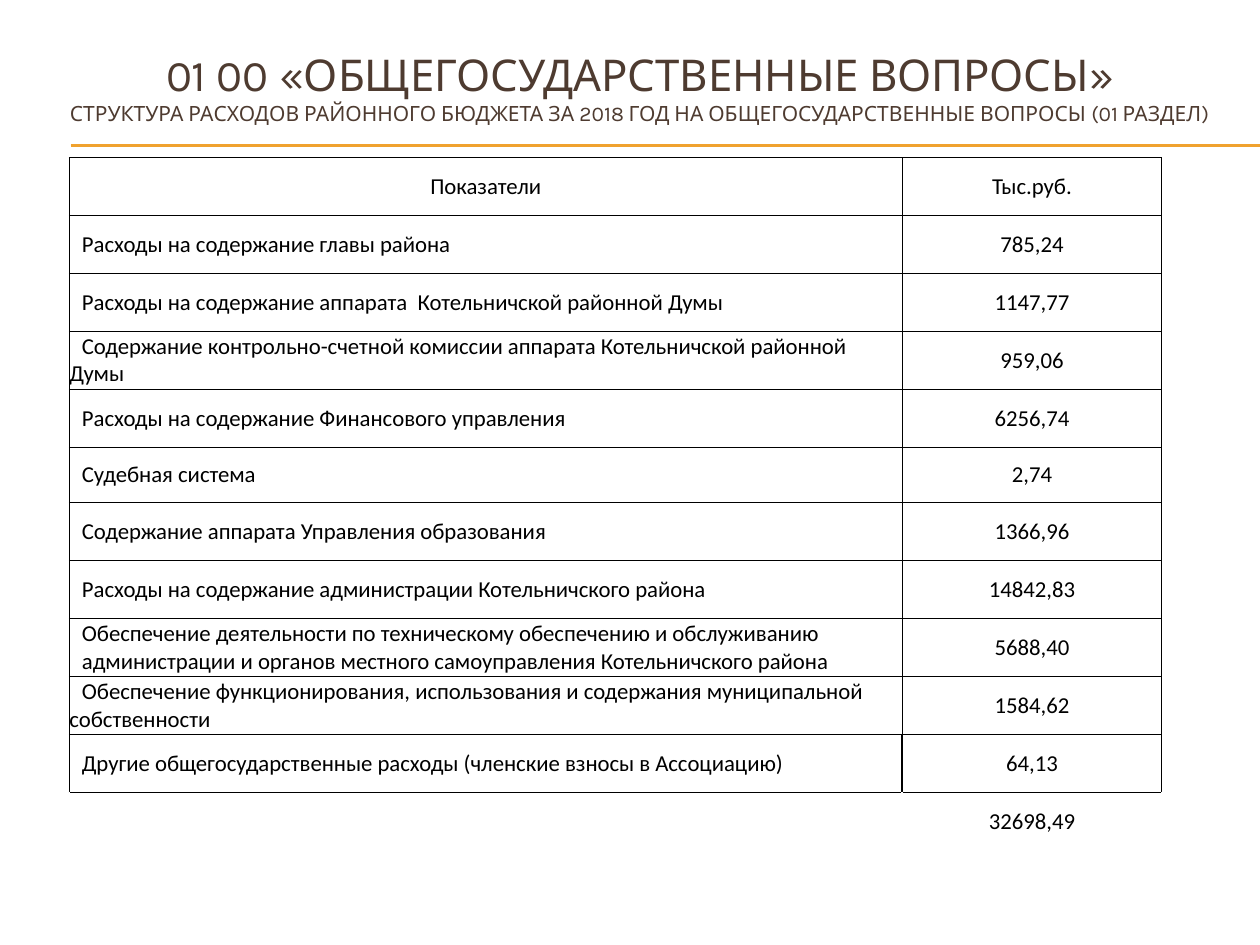
from dataclasses import dataclass

from lxml.etree import SubElement
from pptx import Presentation
from pptx.dml.color import RGBColor
from pptx.enum.shapes import MSO_CONNECTOR
from pptx.enum.text import MSO_ANCHOR, PP_ALIGN
from pptx.oxml import parse_xml
from pptx.oxml.ns import nsdecls, qn
from pptx.util import Inches, Pt

BROWN = RGBColor(0x4E, 0x3B, 0x30)
AMBER = RGBColor(0xF0, 0xA2, 0x2E)
BLACK = RGBColor(0, 0, 0)

THIN, THICK = 0.5, 1
ROW_HEIGHT, COURT_ROW_HEIGHT = 0.46, 0.44
INDENT = 0.1


@dataclass
class Expense:
    name: str
    amount: str
    align: PP_ALIGN = PP_ALIGN.LEFT
    left: float = 0
    first_line: float = INDENT
    height: float = ROW_HEIGHT


HEADER = Expense("Показатели", "Тыс.руб.", PP_ALIGN.CENTER, first_line=0)
EXPENSES = [
    Expense("Расходы на содержание главы района", "785,24"),
    Expense("Расходы на содержание аппарата  Котельничской районной Думы", "1147,77"),
    Expense("Содержание контрольно-счетной комиссии аппарата Котельничской "
            "районной Думы", "959,06"),
    Expense("Расходы на содержание Финансового управления", "6256,74"),
    Expense("Судебная система", "2,74", height=COURT_ROW_HEIGHT),
    Expense("Содержание аппарата Управления образования", "1366,96"),
    Expense("Расходы на содержание администрации Котельничского района", "14842,83"),
    Expense("Обеспечение деятельности по техническому обеспечению и обслуживанию "
            "администрации и органов местного самоуправления Котельничского района",
            "5688,40", left=INDENT, first_line=0),
    Expense("Обеспечение функционирования, использования и содержания "
            "муниципальной собственности", "1584,62"),
    Expense("Другие общегосударственные расходы (членские взносы в Ассоциацию)", "64,13"),
]
TOTAL = Expense("", "32698,49")


def add_span(para, text: str, font: str, size: float, color: RGBColor) -> None:
    span = para.add_run()
    span.text = text
    for name, value in {"name": font, "size": Pt(size)}.items():
        setattr(span.font, name, value)
    span.font.color.rgb = color


def add_title(page) -> None:
    title = page.shapes.title
    place = {"left": 0.33, "top": 0.23, "width": 9.5, "height": 0.92}
    for name, value in place.items():
        setattr(title, name, Inches(value))
    frame = title.text_frame
    frame.word_wrap = True
    frame.vertical_anchor = MSO_ANCHOR.MIDDLE
    para = frame.paragraphs[0]
    para.alignment = PP_ALIGN.CENTER
    add_span(para, "01 00 «ОБЩЕГОСУДАРСТВЕННЫЕ ВОПРОСЫ»", "Karla", 25, BROWN)
    para.add_line_break()
    add_span(para, "СТРУКТУРА РАСХОДОВ РАЙОННОГО БЮДЖЕТА ЗА 2018 ГОД "
             "НА ОБЩЕГОСУДАРСТВЕННЫЕ ВОПРОСЫ (01 РАЗДЕЛ)", "Karla", 12, BROWN)


def add_rule(page, top: float) -> None:
    """Draw a horizontal line under the title, out to the right edge."""
    rule = page.shapes.add_connector(
        MSO_CONNECTOR.STRAIGHT, Inches(0.56), Inches(top), Inches(10), Inches(top))
    rule.line.color.rgb = AMBER
    rule.line.width = Pt(0.75)
    SubElement(rule._element.spPr, qn("a:effectLst"))


def set_borders(cell, widths: dict[str, float]) -> None:
    """Set cell borders; widths maps the sides L, R, T, B, in that order, to points."""
    properties = cell._tc.get_or_add_tcPr()
    for position, (side, width) in enumerate(widths.items()):
        properties.insert(position, parse_xml(
            f'<a:ln{side} {nsdecls("a")} w="{Pt(width)}"><a:solidFill>'
            f'<a:srgbClr val="{BLACK}"/></a:solidFill></a:ln{side}>'))


def fill_cell(cell, text: str, align: PP_ALIGN, left: float = 0,
              first_line: float = 0) -> None:
    cell.fill.background()
    cell.vertical_anchor = MSO_ANCHOR.MIDDLE
    for side in ("left", "right", "top", "bottom"):
        setattr(cell, f"margin_{side}", 0)
    para = cell.text_frame.paragraphs[0]
    para.alignment = align
    para.font.size = Pt(13)
    properties = para._p.get_or_add_pPr()
    for name, value in {"marL": left, "indent": first_line}.items():
        properties.set(name, str(Inches(value)))
    if text:
        add_span(para, text, "Calibri", 13, BLACK)


def add_expense_table(page) -> None:
    rows = [HEADER, *EXPENSES, TOTAL]
    table = page.shapes.add_table(
        len(rows), 2, Inches(0.55), Inches(1.25), Inches(8.67), Inches(5.5)).table
    table.first_row = table.horz_banding = False
    for column, width in zip(table.columns, (6.61, 2.06)):
        column.width = Inches(width)
    for index, expense in enumerate(rows):
        table.rows[index].height = Inches(expense.height)
        name_cell, amount_cell = table.rows[index].cells
        fill_cell(name_cell, expense.name, expense.align,
                  expense.left, expense.first_line)
        fill_cell(amount_cell, expense.amount, PP_ALIGN.CENTER)
        if expense is TOTAL:
            borders = {"T": THICK}
        elif expense is EXPENSES[-1]:
            borders = {"L": THICK, "R": THICK, "T": THIN, "B": THICK}
        else:
            borders = dict.fromkeys("LRTB", THIN)
        for cell in (name_cell, amount_cell):
            set_borders(cell, borders)


def main() -> None:
    deck = Presentation()
    deck.slide_width, deck.slide_height = Inches(10), Inches(7.5)
    page = deck.slides.add_slide(deck.slide_layouts[5])
    for top in (1.15, 1.16):
        add_rule(page, top)
    add_title(page)
    add_expense_table(page)
    deck.save("out.pptx")


if __name__ == "__main__":
    main()
